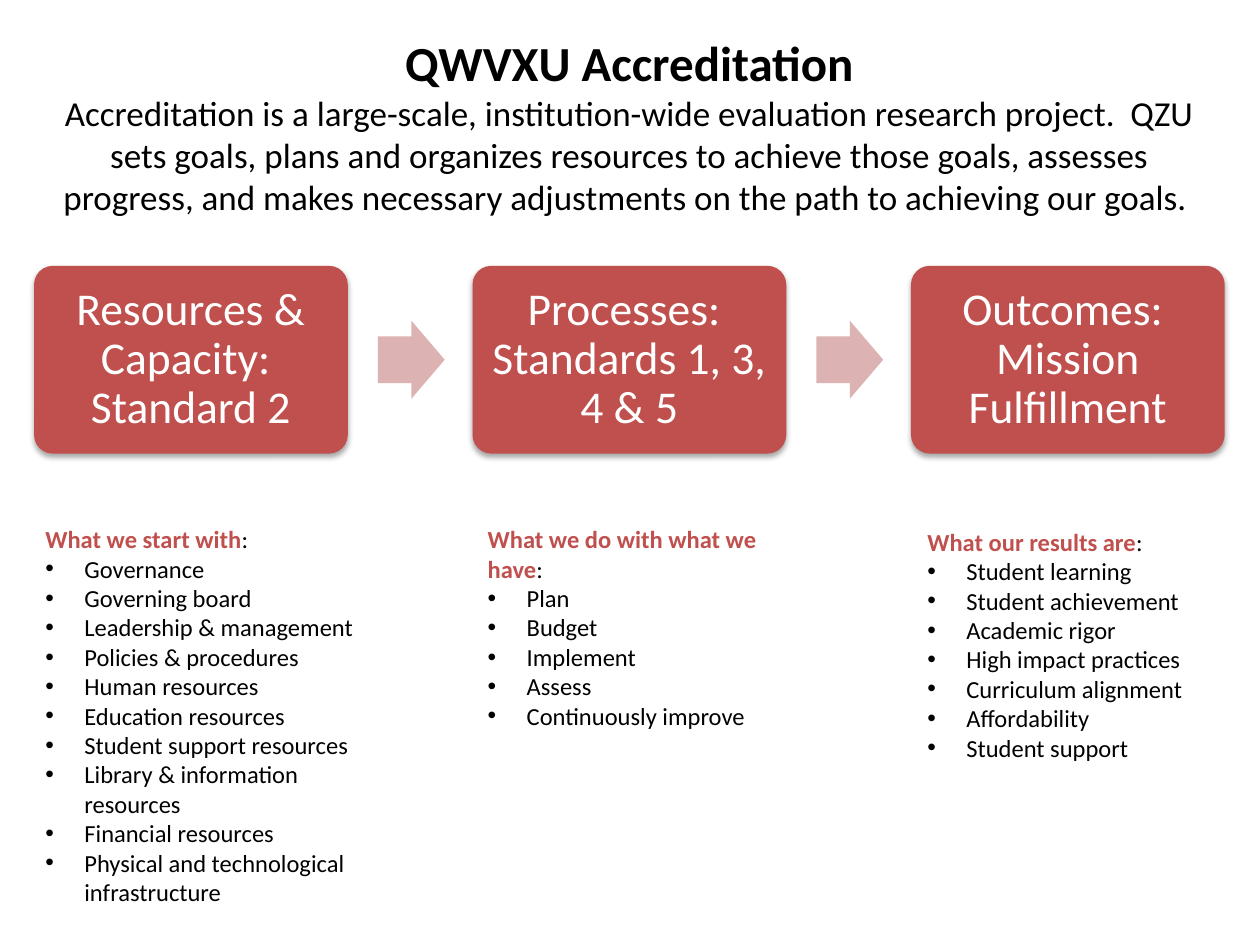
"""Build a slide on accreditation: three linked stages with a list under each."""
from lxml import etree
from pptx import Presentation
from pptx.dml.color import RGBColor
from pptx.enum.shapes import MSO_SHAPE
from pptx.enum.text import MSO_ANCHOR, MSO_AUTO_SIZE, PP_ALIGN
from pptx.oxml import parse_xml
from pptx.oxml.ns import nsdecls, qn
from pptx.util import Inches, Pt

RED = RGBColor(0xC0, 0x50, 0x4D)
PINK = RGBColor(0xDC, 0xB3, 0xB2)
BLACK = RGBColor(0, 0, 0)
WHITE = RGBColor(255, 255, 255)
ROUND, ARROW = MSO_SHAPE.ROUNDED_RECTANGLE, MSO_SHAPE.RIGHT_ARROW
TOP, MIDDLE = MSO_ANCHOR.TOP, MSO_ANCHOR.MIDDLE
CENTER, LEFT = PP_ALIGN.CENTER, PP_ALIGN.LEFT
FIXED = MSO_AUTO_SIZE.NONE

START, STEP = 0.27, 3.48
BOX_TOP, BOX_WIDE, BOX_HIGH = 2.11, 2.49, 1.49
ARROW_WIDE, ARROW_HIGH = 0.53, 0.62
INSET = Inches(0.11)
INDENT = Inches(0.31)
SHADOW = (
    f'<a:effectLst {nsdecls("a")}>'
    '<a:outerShdw blurRad="40000" dist="23000" dir="5400000" rotWithShape="0">'
    '<a:srgbClr val="000000"><a:alpha val="35000"/></a:srgbClr>'
    '</a:outerShdw></a:effectLst>'
)

STAGES = [
    ("Resources & Capacity:  Standard 2", "What we start with", (0.26, 4.11, 3.01, 3.16), [
        "Governance", "Governing board", "Leadership & management",
        "Policies & procedures", "Human resources", "Education resources",
        "Student support resources", "Library & information resources",
        "Financial resources", "Physical and technological infrastructure"]),
    ("Processes:  Standards 1, 3, 4 & 5", "What we do with what we have", (3.77, 4.11, 2.48, 1.75), [
        "Plan", "Budget", "Implement", "Assess", "Continuously improve"]),
    ("Outcomes:  Mission Fulfillment", "What our results are", (7.26, 4.13, 2.48, 1.99), [
        "Student learning", "Student achievement", "Academic rigor",
        "High impact practices", "Curriculum alignment", "Affordability",
        "Student support"]),
]


def place(holder, left, top, wide, high):
    holder.left, holder.top = Inches(left), Inches(top)
    holder.width, holder.height = Inches(wide), Inches(high)
    frame = holder.text_frame
    frame.auto_size, frame.word_wrap = FIXED, True
    frame.vertical_anchor = TOP
    return frame


def style(line, size, color, bold, align):
    line.alignment = align
    line.space_before = Pt(0)
    line.font.name, line.font.size = "Calibri", Pt(size)
    line.font.color.rgb, line.font.bold = color, bold


deck = Presentation()
deck.slide_width, deck.slide_height = Inches(10), Inches(7.5)
slide = deck.slides.add_slide(deck.slide_layouts.get_by_name("Comparison"))
shapes = slide.shapes

frame = place(shapes.title, 0.26, 0.21, 9.47, 1.58)
head = frame.paragraphs[0]
head.text = "QWVXU Accreditation"
style(head, 28, BLACK, True, CENTER)
intro = frame.add_paragraph()
intro.text = (
    "Accreditation is a large-scale, institution-wide evaluation research project.  "
    "QZU sets goals, plans and organizes resources to achieve those goals, assesses "
    "progress, and makes necessary adjustments on the path to achieving our goals. ")
style(intro, 20, BLACK, False, CENTER)

bodies = [holder for holder in slide.placeholders if holder.placeholder_format.idx in (1, 2, 3, 4)]
spare = bodies.pop().element
spare.getparent().remove(spare)

for col, (label, lead, area, items) in enumerate(STAGES):
    left = START + col * STEP
    box = shapes.add_shape(
        ROUND, Inches(left), Inches(BOX_TOP), Inches(BOX_WIDE), Inches(BOX_HIGH))
    box.adjustments[0] = 0.1
    box.fill.solid()
    box.fill.fore_color.rgb = RED
    box.line.fill.background()
    box.element.spPr.append(parse_xml(SHADOW))
    frame = box.text_frame
    frame.word_wrap, frame.vertical_anchor = True, MIDDLE
    frame.margin_left = frame.margin_right = INSET
    frame.margin_top = frame.margin_bottom = INSET
    line = frame.paragraphs[0]
    line.text, line.line_spacing = label, 0.9
    style(line, 26, WHITE, False, CENTER)

    if col < len(STAGES) - 1:
        arrow = shapes.add_shape(
            ARROW, Inches(left + BOX_WIDE + 0.24),
            Inches(BOX_TOP + (BOX_HIGH - ARROW_HIGH) / 2),
            Inches(ARROW_WIDE), Inches(ARROW_HIGH))
        arrow.adjustments[0], arrow.adjustments[1] = 0.6, 0.5
        arrow.fill.solid()
        arrow.fill.fore_color.rgb = PINK
        arrow.line.fill.background()
        arrow.shadow.inherit = False

    frame = place(bodies[col], *area)
    line = frame.paragraphs[0]
    style(line, 14, BLACK, False, LEFT)
    run = line.add_run()
    run.text, run.font.bold, run.font.color.rgb = lead, True, RED
    line.add_run().text = ":"
    props = line._p.get_or_add_pPr()
    props.set("marL", "0")
    props.set("indent", "0")
    etree.SubElement(props, qn("a:buNone"))
    props.append(props.find(qn("a:defRPr")))
    for item in items:
        line = frame.add_paragraph()
        line.text = item
        style(line, 14, BLACK, False, LEFT)
        props = line._p.get_or_add_pPr()
        props.set("marL", str(INDENT))
        props.set("indent", str(-INDENT))
        etree.SubElement(props, qn("a:buFont"), typeface="Arial")
        etree.SubElement(props, qn("a:buChar"), char="•")
        props.append(props.find(qn("a:defRPr")))

deck.save("out.pptx")
